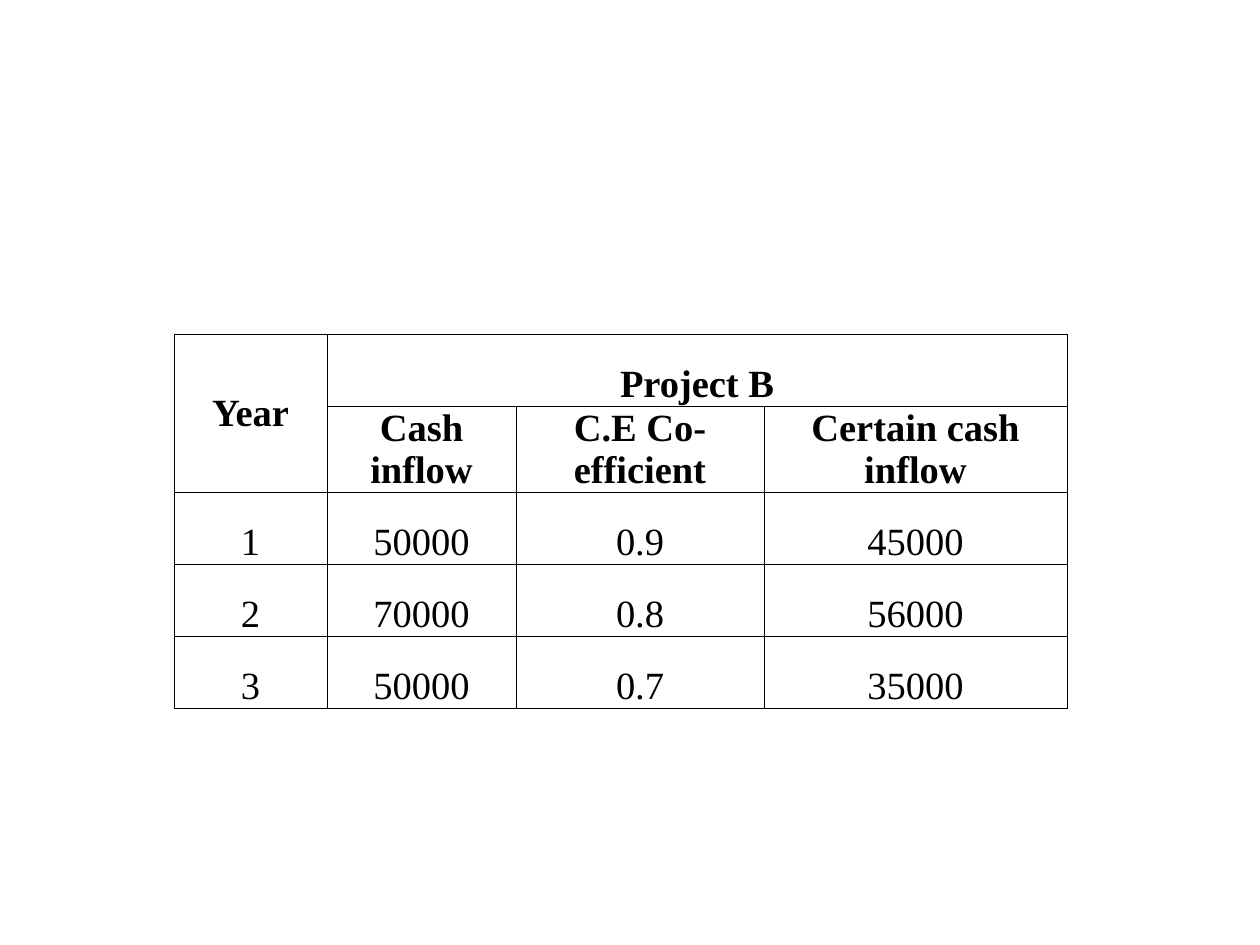
from lxml.etree import SubElement
from pptx import Presentation
from pptx.dml.color import RGBColor as Rgb
from pptx.enum.text import MSO_ANCHOR as Anchor, PP_ALIGN as Align
from pptx.oxml.ns import qn
from pptx.util import Pt

SCALE = 914400 / 126
COLORS = {"ink": "000000", "paper": "FFFFFF"}
FONT = {"name": "Times New Roman", "size": Pt(22)}
CELL = {"margin_left": 1, "margin_right": 1, "margin_top": 1, "margin_bottom": 0}

# Table content; None marks a cell covered by a merge
COLS = [153, 189, 248, 303]
ROW = 72
HEADS = 2
ROWS = [
    ["Year", "Project B", None, None],
    [None, "Cash inflow", "C.E Co-efficient", "Certain cash inflow"],
    ["1", "50000", "0.9", "45000"],
    ["2", "70000", "0.8", "56000"],
    ["3", "50000", "0.7", "35000"],
]
MERGES = [((0, 0), (1, 0)), ((0, 1), (0, 3))]


def px(n):
    return round(n * SCALE)


class Deck:
    def __init__(self, wide, high):
        self.prs = Presentation()
        self.prs.slide_width, self.prs.slide_height = px(wide), px(high)
        self.slide = self.prs.slides.add_slide(self.prs.slide_layouts[6])

    def border(self, cell, width=0.5):
        props = cell._tc.get_or_add_tcPr()
        for side in ("lnL", "lnR", "lnT", "lnB"):
            line = SubElement(props, qn(f"a:{side}"), w=str(Pt(width)))
            fill = SubElement(line, qn("a:solidFill"))
            SubElement(fill, qn("a:srgbClr"), val=COLORS["ink"])

    def cell(self, cell, text, bold, anchor):
        self.border(cell)
        cell.fill.solid()
        cell.fill.fore_color.rgb = Rgb.from_string(COLORS["paper"])
        cell.vertical_anchor = anchor
        for key, val in CELL.items():
            setattr(cell, key, px(val))
        if text is None:
            return
        para = cell.text_frame.paragraphs[0]
        para.alignment = Align.CENTER
        run = para.add_run()
        run.text = text
        for key, val in {**FONT, "bold": bold}.items():
            setattr(run.font, key, val)
        run.font.color.rgb = Rgb.from_string(COLORS["ink"])

    def table(self, left, top, cols, row, rows, heads, merges):
        frame = self.slide.shapes.add_table(
            len(rows), len(cols), px(left), px(top), px(sum(cols)), px(row * len(rows)))
        table = frame.table
        table.first_row = table.horz_banding = False
        for col, wide in zip(table.columns, cols):
            col.width = px(wide)
        for line in table.rows:
            line.height = px(row)
        for start, end in merges:
            table.cell(*start).merge(table.cell(*end))
        for r, line in enumerate(rows):
            for c, text in enumerate(line):
                cell = table.cell(r, c)
                tall = cell.is_merge_origin and cell.span_height > 1
                self.cell(cell, text, r < heads, Anchor.MIDDLE if tall else Anchor.BOTTOM)


# Cash flow table
deck = Deck(1260, 945)
deck.table(174, 334, COLS, ROW, ROWS, HEADS, MERGES)
deck.prs.save("out.pptx")
